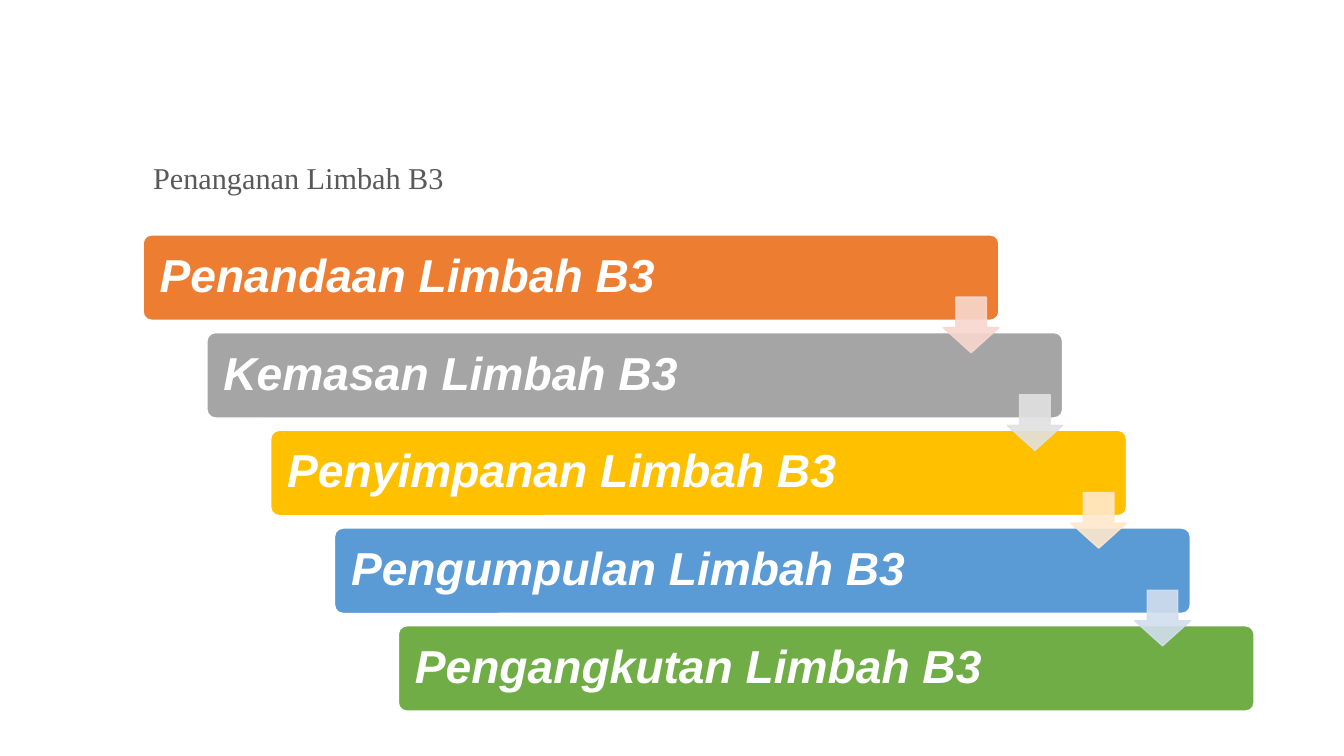
from pptx import Presentation
from pptx.util import Pt
from pptx.dml.color import RGBColor
from pptx.enum.shapes import MSO_SHAPE
from pptx.enum.text import MSO_ANCHOR, PP_ALIGN
from lxml import etree

BAR = MSO_SHAPE.ROUNDED_RECTANGLE
DOWN = MSO_SHAPE.DOWN_ARROW
MIDDLE = MSO_ANCHOR.MIDDLE
LEFT = PP_ALIGN.LEFT
NS = "http://schemas.openxmlformats.org/drawingml/2006/main"

# Content: step text, bar colour, colour of the arrow below it
TITLE = "Penanganan Limbah B3"
STEPS = [
    ("Penandaan Limbah B3", "orange", "peach"),
    ("Kemasan Limbah B3", "gray", "silver"),
    ("Penyimpanan Limbah B3", "gold", "cream"),
    ("Pengumpulan Limbah B3", "blue", "sky"),
    ("Pengangkutan Limbah B3", "green", None),
]
COLORS = {
    "title": "595959", "white": "FFFFFF",
    "orange": "ED7D31", "gray": "A5A5A5", "gold": "FFC000",
    "blue": "5B9BD5", "green": "70AD47",
    "peach": "F8D7CE", "silver": "E1E1E1", "cream": "FFE8CC", "sky": "D2DEEF",
}

# Staircase measures in points
X, Y = 102.2, 167.8
STEP_X, STEP_Y = 45.58, 69.8
BAR_W, BAR_H = 611.3, 61
ARROW = 39.7
ARROW_X, ARROW_Y = BAR_W - ARROW, 44.4


def color(name):
    return RGBColor.from_string(COLORS[name])


def write(frame, text, font, size, tint, bold=False):
    frame.word_wrap = True
    frame.vertical_anchor = MIDDLE
    para = frame.paragraphs[0]
    para.alignment = LEFT
    para.line_spacing = 0.9
    run = para.add_run()
    run.text = text
    run.font.name = font
    run.font.size = Pt(size)
    run.font.bold = run.font.italic = bold
    run.font.color.rgb = color(tint)


def block(slide, kind, x, y, w, h, fill, line, adjust):
    shape = slide.shapes.add_shape(kind, Pt(x), Pt(y), Pt(w), Pt(h))
    shape.shadow.inherit = False
    for i, value in enumerate(adjust):
        shape.adjustments[i] = value
    shape.fill.solid()
    shape.fill.fore_color.rgb = color(fill)
    shape.line.color.rgb = color(line)
    shape.line.width = Pt(1)
    return shape


def fade(shape, percent):
    for node in shape.element.spPr.iter(f"{{{NS}}}srgbClr"):
        alpha = etree.SubElement(node, f"{{{NS}}}alpha")
        alpha.set("val", str(percent * 1000))


def main():
    deck = Presentation()
    deck.slide_width, deck.slide_height = Pt(960), Pt(540)
    slide = deck.slides.add_slide(deck.slide_layouts[5])

    # Title
    title = slide.shapes.title
    title.left, title.top = Pt(X), Pt(111.5)
    title.width, title.height = Pt(793.5), Pt(34)
    write(title.text_frame, TITLE, "Times New Roman", 21.6, "title")

    # Bars
    for i, (text, fill, _) in enumerate(STEPS):
        bar = block(slide, BAR, X + i * STEP_X, Y + i * STEP_Y,
                    BAR_W, BAR_H, fill, "white", [0.1])
        bar.text_frame.margin_left = Pt(10)
        write(bar.text_frame, text, "Arial", 33, "white", True)

    # Arrows between bars
    for i, (_, _, tint) in enumerate(STEPS[:-1]):
        arrow = block(slide, DOWN, X + i * STEP_X + ARROW_X,
                      Y + i * STEP_Y + ARROW_Y, ARROW, ARROW,
                      tint, tint, [0.55, 0.45])
        fade(arrow, 90)

    deck.save("out.pptx")


if __name__ == "__main__":
    main()
